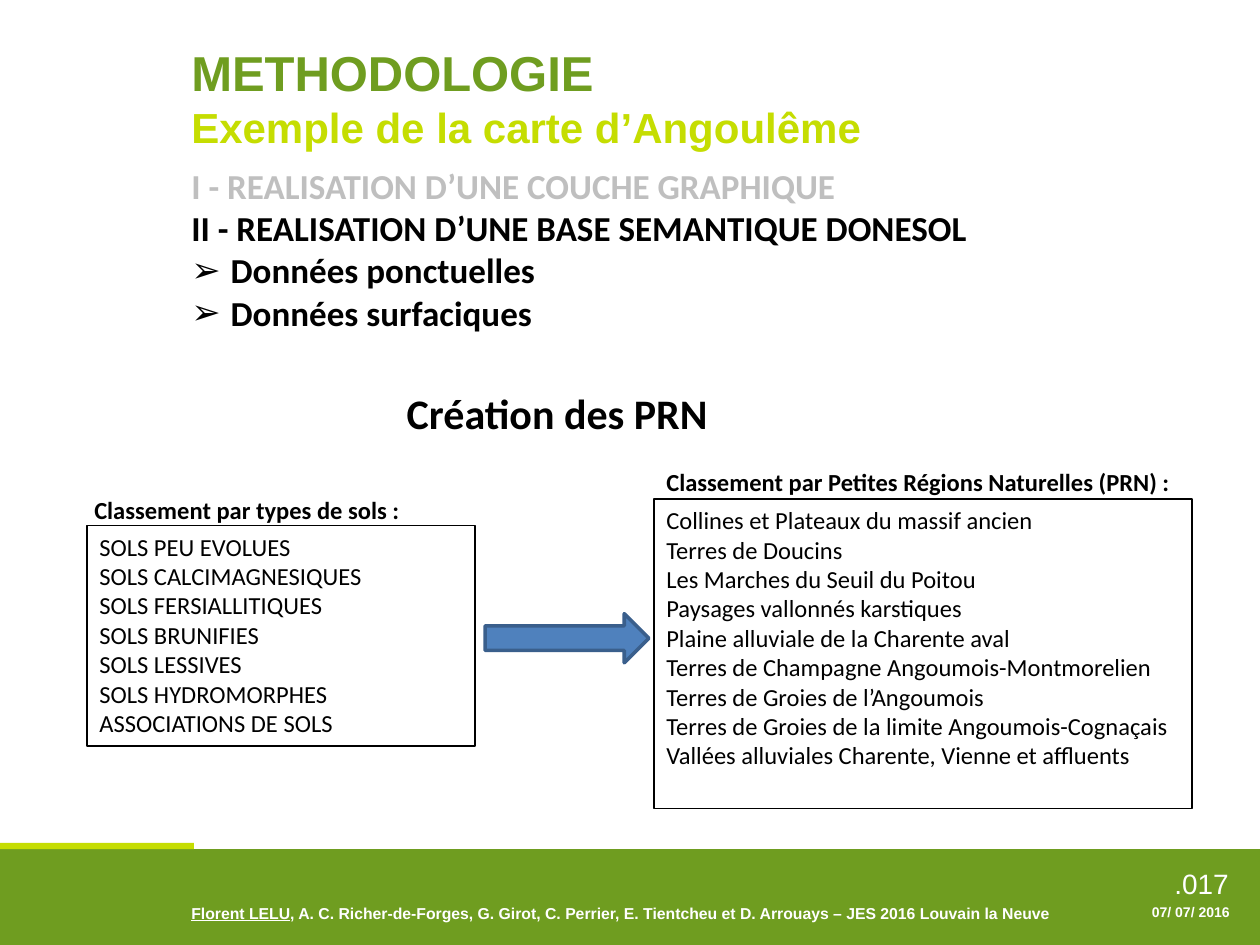
from dataclasses import dataclass

from lxml import etree
from pptx import Presentation
from pptx.dml.color import RGBColor
from pptx.enum.shapes import MSO_SHAPE
from pptx.enum.text import MSO_ANCHOR, PP_ALIGN
from pptx.oxml.ns import qn
from pptx.util import Pt

RECT = MSO_SHAPE.RECTANGLE
ARROW = MSO_SHAPE.RIGHT_ARROW
TOP = MSO_ANCHOR.TOP
LEFT = PP_ALIGN.LEFT
RIGHT = PP_ALIGN.RIGHT


@dataclass(frozen=True)
class Theme:
    green: str = "6F9D20"
    lime: str = "C5DD01"
    white: str = "FFFFFF"
    black: str = "000000"
    grey: str = "BFBFBF"
    blue: str = "4F81BD"
    navy: str = "3A5F8C"
    sans: str = "Arial"
    body: str = "Calibri"
    title: int = 28
    sub: int = 24
    plan: int = 20
    page: int = 16
    text: int = 14
    foot: int = 9
    date: int = 8


T = Theme()
MARGIN = 102.24
INDENT = 22.5

SOILS = [
    "SOLS PEU EVOLUES",
    "SOLS CALCIMAGNESIQUES",
    "SOLS FERSIALLITIQUES",
    "SOLS BRUNIFIES",
    "SOLS LESSIVES",
    "SOLS HYDROMORPHES",
    "ASSOCIATIONS DE SOLS",
]
REGIONS = [
    "Collines et Plateaux du massif ancien",
    "Terres de Doucins",
    "Les Marches du Seuil du Poitou",
    "Paysages vallonnés karstiques",
    "Plaine alluviale de la Charente aval",
    "Terres de Champagne Angoumois-Montmorelien",
    "Terres de Groies de l’Angoumois",
    "Terres de Groies de la limite Angoumois-Cognaçais",
    "Vallées alluviales Charente, Vienne et affluents",
]


def style(font, color, **form):
    for key, value in form.items():
        setattr(font, key, value)
    font.color.rgb = RGBColor.from_string(color)


def add_form(slide, kind, box, fill=None, line=None, width=0.75):
    shape = slide.shapes.add_shape(kind, *map(Pt, box))
    shape.shadow.inherit = False
    if fill:
        shape.fill.solid()
        shape.fill.fore_color.rgb = RGBColor.from_string(fill)
    else:
        shape.fill.background()
    if line:
        shape.line.color.rgb = RGBColor.from_string(line)
        shape.line.width = Pt(width)
    else:
        shape.line.fill.background()
    return shape


def add_mark(para):
    props = para._p.get_or_add_pPr()
    props.set("marL", str(Pt(INDENT)))
    props.set("indent", str(-Pt(INDENT)))
    etree.SubElement(props, qn("a:buFont"), typeface=T.sans)
    etree.SubElement(props, qn("a:buChar"), char="➢")


def write(shape, lines, size, color=T.black, name=T.body, bold=True,
          align=LEFT, marks=()):
    frame = shape.text_frame
    frame.word_wrap = True
    frame.vertical_anchor = TOP
    for i, line in enumerate(lines):
        para = frame.paragraphs[0] if i == 0 else frame.add_paragraph()
        para.alignment = align
        if i in marks:
            add_mark(para)
        run = para.add_run()
        run.text = line
        style(run.font, color, name=name, size=Pt(size), bold=bold)
    return frame.paragraphs


def add_text(slide, box, lines, size, **form):
    shape = slide.shapes.add_textbox(*map(Pt, box))
    return write(shape, lines, size, **form)


def add_list(slide, box, lines):
    shape = add_form(slide, RECT, box, line=T.black)
    write(shape, lines, T.text, bold=False)


def add_head(slide, box, line, size, color):
    shape = add_form(slide, RECT, box, fill=T.white)
    write(shape, [line], size, color=color, name=T.sans)


def add_plan(slide):
    paras = add_text(slide, (MARGIN, 90.72, 607.68, 123.84), [
        "I - REALISATION D’UNE COUCHE GRAPHIQUE",
        "II - REALISATION D’UNE BASE SEMANTIQUE DONESOL",
        "Données ponctuelles",
        "Données surfaciques",
    ], T.plan, marks=(2, 3))
    style(paras[0].runs[0].font, T.grey)


def add_foot(slide):
    form = {"color": T.white, "name": T.sans}
    paras = add_text(slide, (MARGIN, 512.64, 547.2, 18), ["Florent LELU"],
                     T.foot, **form)
    paras[0].runs[0].font.underline = True
    run = paras[0].add_run()
    run.text = (", A. C. Richer-de-Forges, G. Girot, C. Perrier, E. Tientcheu "
                "et D. Arrouays – JES 2016 Louvain la Neuve")
    style(run.font, T.white, name=T.sans, size=Pt(T.foot), bold=True)
    add_text(slide, (560.16, 512.64, 149.76, 17.28), ["07/ 07/ 2016"],
             T.date, align=RIGHT, **form)
    add_text(slide, (620.64, 491.76, 88.56, 19.44), [".017"],
             T.page, align=RIGHT, bold=False, **form)


def main():
    deck = Presentation()
    deck.slide_width, deck.slide_height = Pt(720), Pt(540)
    slide = deck.slides.add_slide(deck.slide_layouts[6])

    add_form(slide, RECT, (0, 485.28, 720, 54.72), fill=T.green)
    add_form(slide, RECT, (0, 481.68, 110.88, 3.6), fill=T.lime)
    add_head(slide, (MARGIN, 54.72, 532.8, 36),
             "Exemple de la carte d’Angoulême", T.sub, T.lime)
    add_head(slide, (MARGIN, 20.88, 532.8, 41.04),
             "METHODOLOGIE", T.title, T.green)
    add_plan(slide)

    add_list(slide, (49.68, 300.24, 221.76, 126), SOILS)
    add_form(slide, ARROW, (277.2, 350.64, 93.6, 28.08),
             fill=T.blue, line=T.navy, width=2)
    add_list(slide, (373.68, 285.12, 307.44, 177.12), REGIONS)
    add_text(slide, (46.8, 279.36, 206.64, 24.48),
             ["Classement par types de sols :"], T.text)
    add_text(slide, (373.68, 263.52, 316.8, 24.48),
             ["Classement par Petites Régions Naturelles (PRN) :"], T.text)
    add_text(slide, (225.36, 218.16, 197.28, 36),
             ["Création des PRN"], T.sub)
    add_foot(slide)
    deck.save("out.pptx")


if __name__ == "__main__":
    main()
